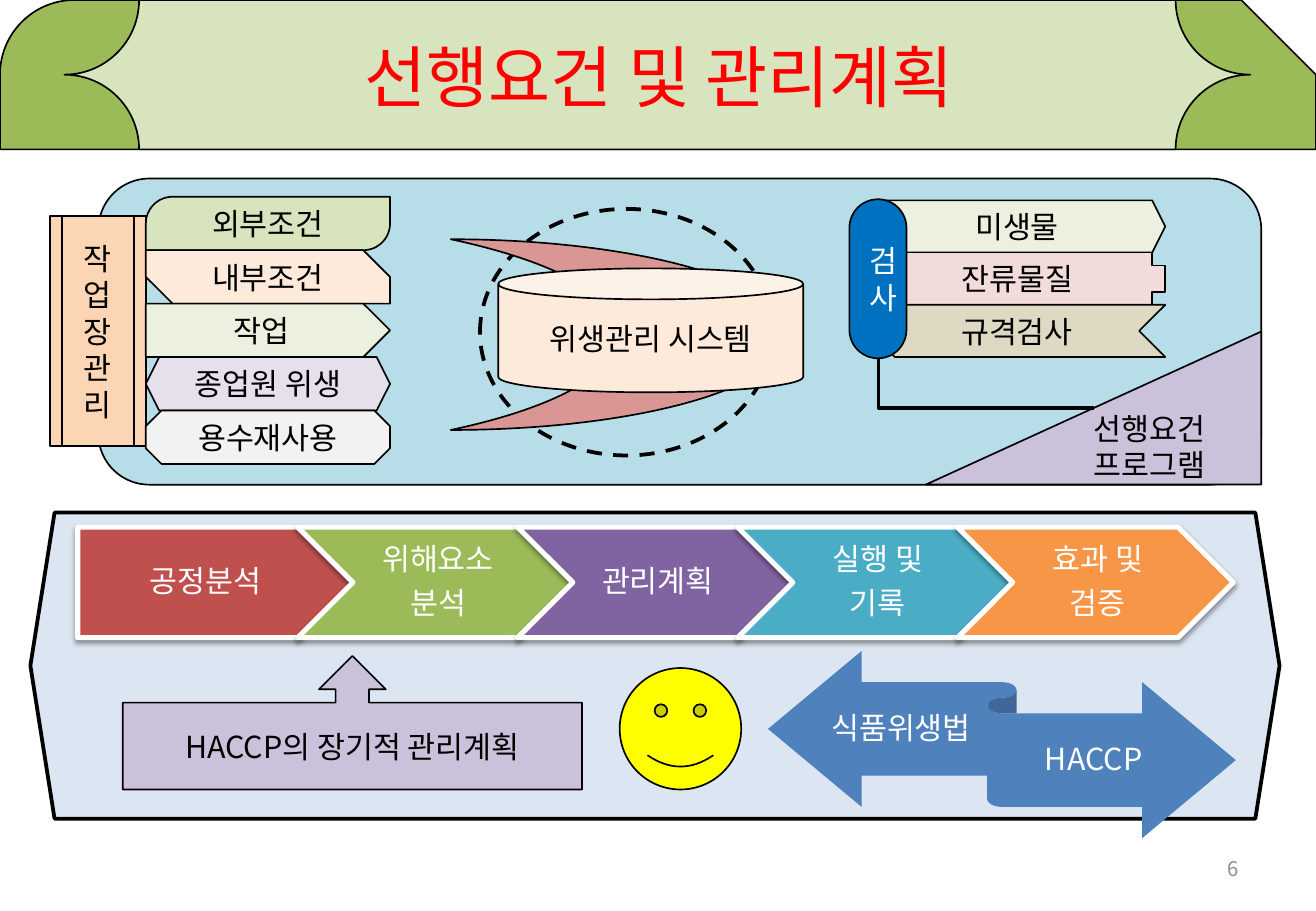
from dataclasses import dataclass

from lxml import etree
from pptx import Presentation
from pptx.dml.color import RGBColor
from pptx.enum.dml import MSO_LINE
from pptx.enum.shapes import MSO_CONNECTOR, MSO_SHAPE
from pptx.enum.text import MSO_ANCHOR, PP_ALIGN
from pptx.oxml.ns import qn
from pptx.util import Emu, Pt

PX = 9144  # 100 px to the inch
DASH = MSO_LINE.DASH
ELBOW = MSO_CONNECTOR.ELBOW
MIDDLE = MSO_ANCHOR.MIDDLE
CENTER, RIGHT = PP_ALIGN.CENTER, PP_ALIGN.RIGHT
HEXAGON = MSO_SHAPE.HEXAGON
CHEVRON = MSO_SHAPE.CHEVRON
HOME_PLATE = MSO_SHAPE.PENTAGON
ROUNDED = MSO_SHAPE.ROUNDED_RECTANGLE
OVAL = MSO_SHAPE.OVAL
PROCESS = MSO_SHAPE.FLOWCHART_PREDEFINED_PROCESS
TRIANGLE = MSO_SHAPE.RIGHT_TRIANGLE
MOON = MSO_SHAPE.MOON
CAN = MSO_SHAPE.CAN
CROSS = MSO_SHAPE.CROSS
OCTAGON = MSO_SHAPE.OCTAGON
ROUND_DIAGONAL = MSO_SHAPE.ROUND_2_DIAG_RECTANGLE
SNIP_DIAGONAL = MSO_SHAPE.SNIP_2_DIAG_RECTANGLE
SNIP_ROUND = MSO_SHAPE.SNIP_ROUND_RECTANGLE
PLAQUE = MSO_SHAPE.PLAQUE
RIBBON = MSO_SHAPE.LEFT_RIGHT_RIBBON
CALLOUT = MSO_SHAPE.UP_ARROW_CALLOUT
SMILEY = MSO_SHAPE.SMILEY_FACE


@dataclass(frozen=True)
class Theme:
    font: str = "Noto Sans CJK KR"
    title_size: int = 40
    body_size: int = 18
    number_size: int = 12
    black: str = "000000"
    white: str = "FFFFFF"
    title: str = "FF0000"
    number: str = "8C8C8C"
    green: str = "9BBB59"
    soft_green: str = "D7E4BD"
    pale_green: str = "EBF1DE"
    sky: str = "B7DEE8"
    peach: str = "FCD5B5"
    cream: str = "FDEADA"
    lilac: str = "CCC1DA"
    pale_lilac: str = "E6E0EC"
    rose: str = "D99694"
    pale_rose: str = "F2DCDB"
    sand: str = "DDD9C3"
    grey: str = "F2F2F2"
    pill: str = "0070C0"
    pale_blue: str = "DCE6F2"
    red: str = "C0504D"
    purple: str = "8064A2"
    teal: str = "4BACC6"
    orange: str = "F79646"
    blue: str = "4F81BD"
    yellow: str = "FFFF00"


THEME = Theme()


@dataclass(frozen=True)
class Box:
    kind: int
    left: int
    top: int
    width: int
    height: int
    fill: str | None
    text: str = ""
    text_color: str = THEME.black
    line: str | None = THEME.black
    weight: float = 1
    flip: bool = False
    adjustments: tuple[float, ...] = ()
    dashed: bool = False
    shadow: bool = False


@dataclass(frozen=True)
class Label:
    left: int
    top: int
    width: int
    height: int
    text: str
    color: str = THEME.white
    size: int = THEME.body_size
    align: PP_ALIGN = CENTER
    insets: tuple[int, int, int, int] = (10, 5, 10, 5)
    compact: bool = False


def px(value: int) -> Emu:
    return Emu(value * PX)


def rgb(color: str) -> RGBColor:
    return RGBColor.from_string(color)


def write_text(text_frame, text: str, color: str, size: int, align=CENTER, compact: bool = False) -> None:
    text_frame.word_wrap = True
    text_frame.vertical_anchor = MIDDLE
    text_frame.text = text
    for paragraph in text_frame.paragraphs:
        paragraph.alignment = align
        if compact:
            paragraph.line_spacing = 0.9
            paragraph.space_after = Pt(6.3)
        for run in paragraph.runs:
            run.font.size = Pt(size)
            run.font.color.rgb = rgb(color)
            run.font.name = THEME.font
            east_asian = etree.SubElement(run.font._element, qn("a:ea"))
            east_asian.set("typeface", THEME.font)


def add_shadow(shape) -> None:
    effects = shape.element.spPr.find(qn("a:effectLst"))
    shadow = etree.SubElement(effects, qn("a:outerShdw"), blurRad=str(Pt(3.1)), dist=str(Pt(1.6)),
                              dir="5400000", rotWithShape="0")
    color = etree.SubElement(shadow, qn("a:srgbClr"), val=THEME.black)
    etree.SubElement(color, qn("a:alpha"), val="38000")


def draw_box(slide, box: Box) -> None:
    shape = slide.shapes.add_shape(box.kind, px(box.left), px(box.top), px(box.width), px(box.height))
    shape.shadow.inherit = False
    for index, value in enumerate(box.adjustments):
        shape.adjustments[index] = value
    if box.fill:
        shape.fill.solid()
        shape.fill.fore_color.rgb = rgb(box.fill)
    else:
        shape.fill.background()
    if box.line:
        shape.line.color.rgb = rgb(box.line)
        shape.line.width = Pt(box.weight)
    else:
        shape.line.fill.background()
    if box.dashed:
        shape.line.dash_style = DASH
    if box.flip:
        shape.element.spPr.find(qn("a:xfrm")).set("flipH", "1")
    if box.shadow:
        add_shadow(shape)
    if box.text:
        write_text(shape.text_frame, box.text, box.text_color, THEME.body_size)


def draw_label(slide, label: Label) -> None:
    shape = slide.shapes.add_textbox(px(label.left), px(label.top), px(label.width), px(label.height))
    frame = shape.text_frame
    frame.margin_left, frame.margin_top, frame.margin_right, frame.margin_bottom = map(px, label.insets)
    write_text(frame, label.text, label.color, label.size, label.align, label.compact)


def draw_inspection_link(slide) -> None:
    """One-bend line from the inspection pill to the programme triangle."""
    connector = slide.shapes.add_connector(ELBOW, px(791), px(227), px(832), px(404))
    connector.line.color.rgb = rgb(THEME.black)
    connector.line.width = Pt(2.25)
    properties = connector._element.spPr
    transform = properties.find(qn("a:xfrm"))
    transform.set("rot", "16200000")
    transform.set("flipH", "1")
    properties.find(qn("a:prstGeom")).set("prst", "bentConnector2")
    etree.SubElement(properties, qn("a:effectLst"))


HEADER = [
    Box(SNIP_ROUND, 0, 0, 1083, 123, THEME.green, adjustments=(0.5, 0.5)),
    Box(PLAQUE, 53, 0, 976, 123, THEME.soft_green, adjustments=(0.5,)),
]
PROGRAM = [
    Box(ROUNDED, 81, 147, 957, 252, THEME.sky),
    Box(OVAL, 395, 172, 241, 203, None, weight=2.25, dashed=True),
    Box(PROCESS, 41, 178, 79, 189, THEME.peach, "작업장관리"),
    Box(TRIANGLE, 762, 273, 276, 126, THEME.lilac, "선행요건\n프로그램", flip=True),
    Box(MOON, 371, 197, 278, 157, THEME.rose, flip=True),
    Box(CAN, 410, 221, 251, 102, THEME.cream, "위생관리 시스템"),
]
INSPECTIONS = [
    (HEXAGON, THEME.pale_green, "미생물", False, ()),
    (CROSS, THEME.pale_rose, "잔류물질", False, ()),
    (CHEVRON, THEME.sand, "규격검사", True, ()),
]
WORKPLACE = [
    (ROUND_DIAGONAL, THEME.soft_green, "외부조건", False, (0.5, 0)),
    (SNIP_DIAGONAL, THEME.cream, "내부조건", False, (0, 0.5)),
    (HOME_PLATE, THEME.pale_green, "작업", False, ()),
    (HEXAGON, THEME.pale_lilac, "종업원 위생", False, ()),
    (OCTAGON, THEME.grey, "용수재사용", True, ()),
]
PILL = Box(ROUNDED, 699, 164, 47, 131, THEME.pill, "검사", THEME.white, adjustments=(0.5,))
PLAN_PANEL = Box(HEXAGON, 25, 422, 1028, 252, THEME.pale_blue, weight=2.25, adjustments=(0.079,))
STEPS = [("공정분석", THEME.red), ("위해요소\n분석", THEME.green), ("관리계획", THEME.purple),
         ("실행 및\n기록", THEME.teal), ("효과 및\n검증", THEME.orange)]
LAW_RIBBON = Box(RIBBON, 632, 536, 385, 154, THEME.blue, line=None)
RIBBON_LABELS = [
    Label(678, 563, 127, 76, "식품위생법", insets=(0, 7, 0, 7), compact=True),
    Label(825, 588, 150, 76, "HACCP", insets=(0, 7, 0, 7), compact=True),
]
LONG_TERM = [
    Box(CALLOUT, 101, 540, 378, 110, THEME.lilac, "HACCP의 장기적 관리계획"),
    Box(SMILEY, 510, 550, 100, 100, THEME.yellow),
]


def draw_rows(slide, rows: list, left: int, top: int, width: int, pitch: int) -> None:
    for index, (kind, fill, text, flip, adjustments) in enumerate(rows):
        draw_box(slide, Box(kind, left, top + pitch * index, width, pitch, fill, text,
                            flip=flip, adjustments=adjustments))


def draw_steps(slide) -> None:
    for index, (text, fill) in enumerate(STEPS):
        left, first = 64 + 181 * index, index == 0
        draw_box(slide, Box(HOME_PLATE if first else CHEVRON, left, 434, 227, 91, fill,
                            line=THEME.white, weight=3, shadow=True))
        draw_label(slide, Label(left if first else left + 45, 434, 204 if first else 136, 91, text,
                                insets=(10 if first else 8, 5, 3, 5), compact=True))


def main() -> None:
    presentation = Presentation()
    presentation.slide_width, presentation.slide_height = px(1083), px(750)
    slide = presentation.slides.add_slide(presentation.slide_layouts[6])

    # Header and page number
    for box in HEADER:
        draw_box(slide, box)
    draw_label(slide, Label(55, 0, 975, 125, "선행요건 및 관리계획", THEME.title, THEME.title_size))
    draw_label(slide, Label(776, 695, 253, 40, "6", THEME.number, THEME.number_size, RIGHT))

    # Prerequisite programme
    for box in PROGRAM:
        draw_box(slide, box)
    draw_rows(slide, INSPECTIONS, 715, 165, 244, 43)
    draw_box(slide, PILL)
    draw_rows(slide, WORKPLACE, 120, 162, 201, 44)
    draw_inspection_link(slide)

    # Management plan
    draw_box(slide, PLAN_PANEL)
    draw_steps(slide)
    draw_box(slide, LAW_RIBBON)
    for label in RIBBON_LABELS:
        draw_label(slide, label)
    for box in LONG_TERM:
        draw_box(slide, box)

    presentation.save("out.pptx")


if __name__ == "__main__":
    main()
